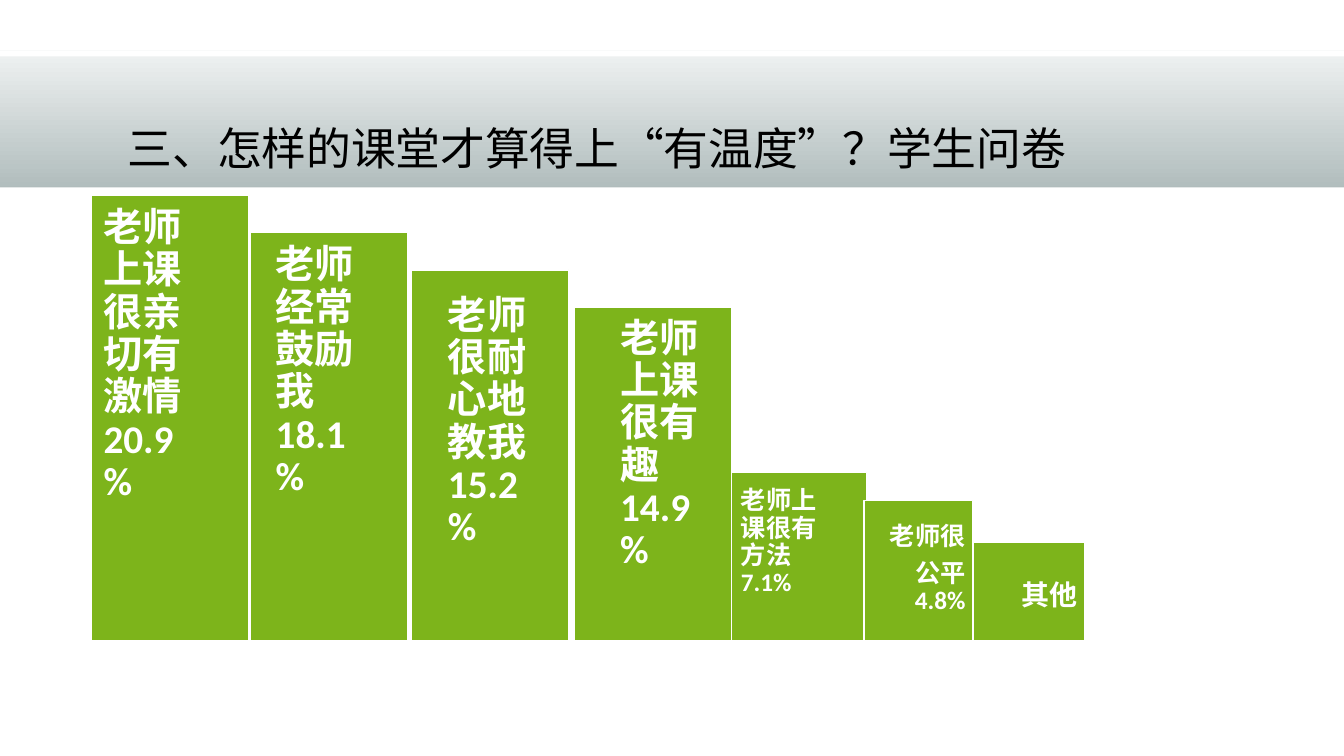
from pptx import Presentation
from pptx.dml.color import RGBColor
from pptx.enum.shapes import MSO_SHAPE
from pptx.enum.text import MSO_ANCHOR, PP_ALIGN
from pptx.util import Cm, Pt

GREEN = RGBColor(0x7D, 0xB4, 0x1B)
WHITE = RGBColor(0xFF, 0xFF, 0xFF)
BLACK = RGBColor(0, 0, 0)
BAND_TOP = RGBColor(0xEF, 0xF2, 0xF2)
BAND_BOTTOM = RGBColor(0xB0, 0xBC, 0xBC)

SLIDE_W, SLIDE_H = 33.87, 19.05
BASELINE = 16.15
BAR_W, BAR_H, BAR_STEP = 3.97, 11.23, 0.94

# left, width, height of each bar
BARS = [(left, BAR_W, BAR_H - i * BAR_STEP)
        for i, left in enumerate((2.31, 6.3, 10.36, 14.48))]
BARS += [(18.44, 3.4, 4.24), (21.77, 2.74, 3.54), (24.52, 2.82, 2.49)]

# top and wording of the large labels, spaced evenly
LARGE_LABELS = [
    (4.93, "老师上课很亲切有激情20.9%"),
    (5.87, "老师经常鼓励我18.1%"),
    (7.14, "老师很耐心地教我15.2%"),
    (7.72, "老师上课很有趣14.9%"),
]
LABEL_LEFT, LABEL_STEP, LABEL_W = 2.31, 4.34, 2.77


def write(tf, *lines, size, font="Calibri", color=WHITE, bold=True,
          align=PP_ALIGN.LEFT, space_after=0.35):
    """Fill a text frame with one paragraph per line; space_after is a share of the size."""
    for i, line in enumerate(lines):
        p = tf.paragraphs[0] if i == 0 else tf.add_paragraph()
        p.alignment = align
        p.line_spacing = 0.9
        p.space_before = Pt(0)
        p.space_after = Pt(size * space_after)
        r = p.add_run()
        r.text = line
        r.font.name = font
        r.font.size = Pt(size)
        r.font.bold = bold
        r.font.color.rgb = color


class SurveySlide:
    def __init__(self, prs):
        self.s = prs.slides.add_slide(prs.slide_layouts.get_by_name("Title Only"))

    def rect(self, left, top, width, height, fill=GREEN, line=None):
        sp = self.s.shapes.add_shape(MSO_SHAPE.RECTANGLE, Cm(left), Cm(top),
                                     Cm(width), Cm(height))
        sp.shadow.inherit = False
        sp.fill.solid()
        sp.fill.fore_color.rgb = fill
        if line is None:
            sp.line.fill.background()
        else:
            sp.line.color.rgb = line
            sp.line.width = Pt(1)
        return sp

    def header_band(self):
        band = self.rect(0, 1.27, SLIDE_W, 3.53)
        band.fill.gradient()
        band.fill.gradient_angle = 270
        for stop, color in zip(band.fill.gradient_stops, (BAND_TOP, BAND_BOTTOM)):
            stop.color.rgb = color
        for top in (4.72, 1.27):
            self.rect(0, top, SLIDE_W, 0.15, fill=WHITE)

    def title(self, text):
        sp = self.s.shapes.title
        sp.left, sp.top, sp.width, sp.height = Cm(2.97), Cm(1.55), Cm(27.94), Cm(3.05)
        tf = sp.text_frame
        tf.word_wrap = True
        tf.vertical_anchor = MSO_ANCHOR.BOTTOM
        write(tf, text, size=40, font="Noto Sans CJK SC", color=BLACK,
              bold=False, space_after=0)
        r = tf.paragraphs[0].runs[0]
        r.font._element.set("cap", "small")
        self.s.shapes._spTree.append(sp._element)  # in front of the band

    def label(self, left, top, width, height, *lines, inset, **style):
        tf = self.s.shapes.add_textbox(Cm(left), Cm(top), Cm(width), Cm(height)).text_frame
        tf.word_wrap = True
        tf.margin_left = tf.margin_right = Cm(inset)
        tf.margin_top = tf.margin_bottom = Cm(inset)
        write(tf, *lines, **style)
        return tf


def main():
    prs = Presentation()
    prs.slide_width, prs.slide_height = Cm(SLIDE_W), Cm(SLIDE_H)
    slide = SurveySlide(prs)
    slide.header_band()
    slide.title("三、怎样的课堂才算得上“有温度”？学生问卷")

    for left, width, height in BARS:
        slide.rect(left, BASELINE - height, width, height, line=WHITE)

    for i, (top, text) in enumerate(LARGE_LABELS):
        slide.label(LABEL_LEFT + i * LABEL_STEP, top, LABEL_W, BASELINE - top, text,
                    inset=0.3, size=28)
    slide.label(18.49, 12.12, LABEL_W, 4.04, "老师上课很有方法7.1%", inset=0.18, size=18)
    slide.label(22.05, 13.03, 2.46, 2.8, "老师很", "公平4.8%",
                inset=0.18, size=18, align=PP_ALIGN.RIGHT)
    slide.label(24.82, 14.46, 2.54, 1.3, "其他",
                inset=0.2, size=20, align=PP_ALIGN.RIGHT)
    prs.save("out.pptx")


if __name__ == "__main__":
    main()
